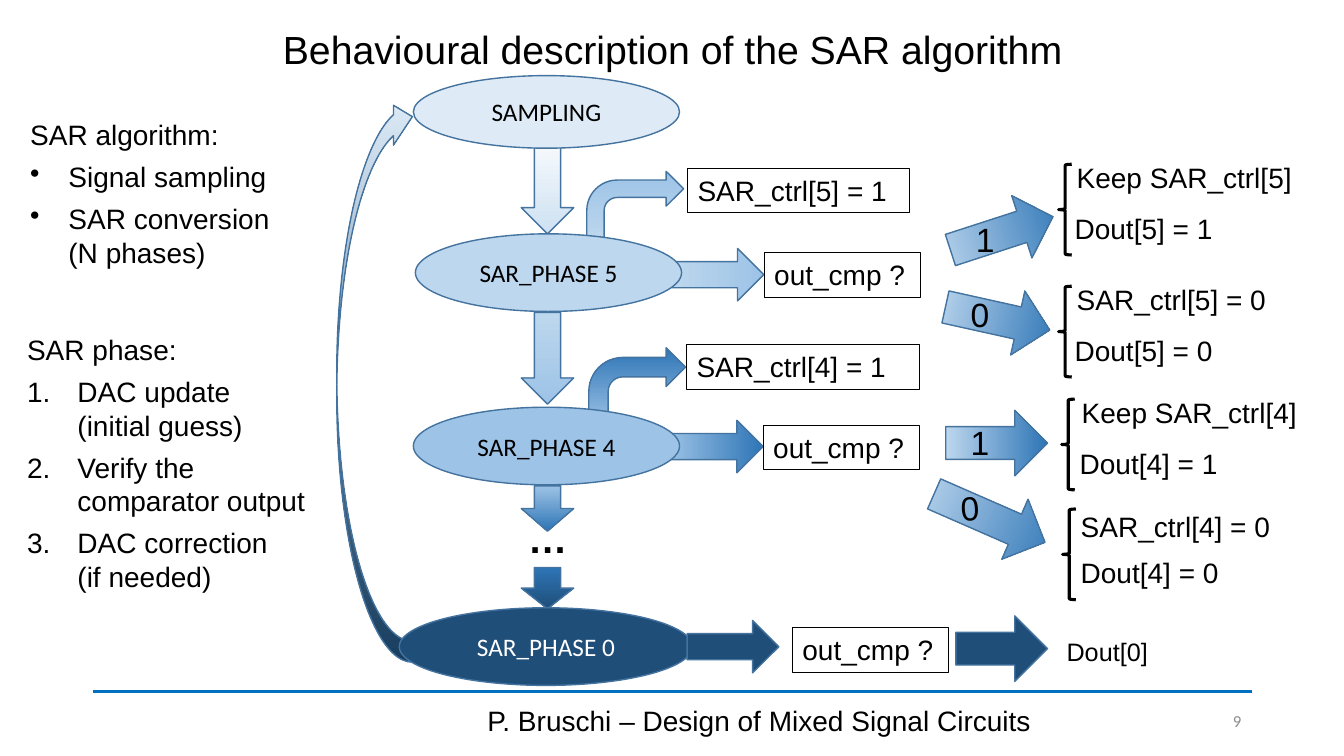
"""Build the slide on the behavioural description of the SAR algorithm."""
from pptx import Presentation
from pptx.dml.color import RGBColor
from pptx.enum.shapes import MSO_CONNECTOR, MSO_SHAPE
from pptx.enum.text import MSO_ANCHOR, PP_ALIGN
from pptx.util import Inches, Pt
from lxml.etree import SubElement
from pptx.oxml.ns import qn

PALE, SOFT, LIGHT, MID, DARK = "DEEBF7", "BDD7EE", "9DC3E6", "2E75B6", "1F4E79"
EDGE, BLACK = "43739E", "000000"
DOWN, BENT = MSO_SHAPE.DOWN_ARROW, MSO_SHAPE.BENT_ARROW

# kind, box, rotation, fill (one colour, or top and bottom of a gradient)
BACK = [
    (BENT, (5.84, 3.45, 0.96, 0.77), 0, (MID, LIGHT)),
    (DOWN, (6.83, 3.95, 0.52, 0.96), 270, (LIGHT, MID)),
    (BENT, (5.82, 1.7, 0.96, 0.69), 0, (LIGHT, SOFT)),
    (DOWN, (6.86, 2.27, 0.52, 0.91), 270, (SOFT, LIGHT)),
]
FRONT = [
    (DOWN, (7.01, 5.96, 0.52, 0.91), 270, (DARK,)),
    (DOWN, (9.61, 5.98, 0.65, 0.91), 270, (DARK,)),
]
# top, height, gradient of the arrows between the states
STEPS = [
    (1.41, 0.91, ("F7FAFD", "CEE1F2")),
    (3.1, 0.91, (SOFT, LIGHT)),
    (4.82, 0.45, (LIGHT, MID)),
    (5.63, 0.41, (MID, DARK)),
]
STATES = [
    ("SAMPLING", (4.1, 0.75, 2.64, 0.72), PALE, BLACK),
    ("SAR_PHASE 5", (4.12, 2.32, 2.64, 0.77), SOFT, BLACK),
    ("SAR_PHASE 4", (4.1, 4.04, 2.64, 0.77), LIGHT, BLACK),
    ("SAR_PHASE 0", (3.96, 6.03, 2.91, 0.77), DARK, "FFFFFF"),
]
# text, left, top, width
FRAMES = [
    ("SAR_ctrl[5] = 1", 6.82, 1.67, 2.2),
    ("out_cmp ?", 7.58, 2.51, 1.55),
    ("SAR_ctrl[4] = 1", 6.81, 3.42, 2.31),
    ("out_cmp ?", 7.57, 4.22, 1.55),
    ("out_cmp ?", 7.86, 6.23, 1.55),
]
# digit, its left, top and turn; arrow box and turn; brace left, top; results
CASES = [
    ("1", 9.58, 2.12, 0, (9.61, 1.78, 0.65, 1.07), 252, 10.5, 1.63,
     [("Keep SAR_ctrl[5]", 10.58, 1.54), ("Dout[5] = 1", 10.56, 2.05)]),
    ("0", 9.53, 2.87, 0, (9.57, 2.63, 0.65, 1.06), 282.5, 10.5, 2.84,
     [("SAR_ctrl[5] = 0", 10.58, 2.75), ("Dout[5] = 0", 10.56, 3.26)]),
    ("1", 9.53, 4.14, 0, (9.56, 3.89, 0.65, 1.01), 270, 10.53, 3.96,
     [("Keep SAR_ctrl[4]", 10.63, 3.87), ("Dout[4] = 1", 10.61, 4.38)]),
    ("0", 9.43, 4.79, 356.5, (9.49, 4.54, 0.65, 1.2), 293.6, 10.54, 5.05,
     [("SAR_ctrl[4] = 0", 10.62, 5.01), ("Dout[4] = 0", 10.62, 5.46)]),
]
# box, indent, bullet tag, bullet attributes, heading, items
LISTS = [
    ((0.17, 3.25, 2.96, 3.05), 0.5, "a:buAutoNum", {"type": "arabicPeriod"},
     "SAR phase:", ["DAC update (initial guess)", "Verify the comparator output",
                    "DAC correction \n(if needed)"]),
    ((0.2, 1.12, 2.78, 1.62), 0.38, "a:buChar", {"char": "•"},
     "SAR algorithm:", ["Signal sampling", "SAR conversion\n(N phases)"]),
]

deck = Presentation()
deck.slide_width, deck.slide_height = Inches(13.33), Inches(7.5)
slide = deck.slides.add_slide(deck.slide_layouts[6])


def color(code):
    return RGBColor.from_string(code)


def style(par, size, face="Arial", tint=BLACK, align=PP_ALIGN.LEFT):
    par.alignment = align
    par.font.size, par.font.name = Pt(size), face
    par.font.color.rgb = color(tint)


def write(item, words, *look, middle=False):
    frame = item.text_frame
    frame.word_wrap = True
    frame.vertical_anchor = MSO_ANCHOR.MIDDLE if middle else MSO_ANCHOR.TOP
    par = frame.paragraphs[0]
    par.text = words
    style(par, *look)
    return par


def label(words, box, *look, middle=False):
    item = slide.shapes.add_textbox(*map(Inches, box))
    return item, write(item, words, *look, middle=middle)


def draw(kind, box, turn=0, fills=(), edge=EDGE, width=1):
    item = slide.shapes.add_shape(kind, *map(Inches, box))
    item.shadow.inherit = False
    item.rotation = turn
    item.line.color.rgb, item.line.width = color(edge), Pt(width)
    if len(fills) == 2:
        item.fill.gradient()
        item.fill.gradient_angle = 270
        for stop, code in zip(item.fill.gradient_stops, fills):
            stop.color.rgb = color(code)
    elif fills:
        item.fill.solid()
        item.fill.fore_color.rgb = color(fills[0])
    else:
        item.fill.background()
    return item


def bullets(box, indent, tag, attrs, head, items):
    item, first = label(head, box, 20)
    first.space_before = Pt(6)
    for words in items:
        par = item.text_frame.add_paragraph()
        par.text = words
        style(par, 20)
        par.space_before = Pt(6)
        props = par._p.get_or_add_pPr()
        props.set("marL", str(Inches(indent)))
        props.set("indent", str(-Inches(indent)))
        mark = SubElement(props, qn(tag), attrs)
        props.insert(list(props).index(props.find(qn("a:defRPr"))), mark)


def main():
    rule = slide.shapes.add_connector(
        MSO_CONNECTOR.STRAIGHT, *map(Inches, (0.92, 6.86, 12.42, 6.86)))
    rule.line.color.rgb, rule.line.width = color("0070C0"), Pt(2.75)
    SubElement(rule._element.spPr, qn("a:effectLst"))

    for arrow in BACK:
        draw(*arrow)
    for top, high, fills in STEPS:
        draw(DOWN, (5.17, top, 0.52, high), 0, fills)
    loop = draw(MSO_SHAPE.CURVED_LEFT_ARROW, (3.34, 0.96, 0.75, 5.61), 0, (DARK, PALE))
    for spot, value in enumerate((0.278, 0.528, 0.25)):
        loop.adjustments[spot] = value
    for side in ("flipH", "flipV"):
        loop._element.spPr.xfrm.set(side, "1")

    for words, box, fill, tint in STATES:
        write(draw(MSO_SHAPE.OVAL, box, 0, (fill,)), words,
              18, "Calibri", tint, PP_ALIGN.CENTER, middle=True)
    for words, left, top, wide in FRAMES:
        write(draw(MSO_SHAPE.RECTANGLE, (left, top, wide, 0.44), 0, (), BLACK, 0.75),
              words, 20)
    for arrow in FRONT:
        draw(*arrow)

    for digit, left, top, tilt, box, turn, edge, high, results in CASES:
        draw(DOWN, box, turn, (SOFT, MID))
        label(digit, (left, top, 0.4, 0.5), 24)[0].rotation = tilt
        draw(MSO_SHAPE.LEFT_BRACE, (edge, high, 0.13, 0.9), 0, (), BLACK, 2.25)
        for words, start, level in results:
            label(words, (start, level, 2.7, 0.44), 20)

    for group in LISTS:
        bullets(*group)
    label("Dout[0]", (10.48, 6.26, 1.08, 0.4), 18)
    label("…", (5.14, 5.05, 1.54, 0.57), 28)[1].font.bold = True
    title = label("Behavioural description of the SAR algorithm", (0.92, 0.15, 11.5, 0.72),
                  28, "Arial", BLACK, PP_ALIGN.CENTER, middle=True)[1]
    title.line_spacing = 0.9
    label("P. Bruschi – Design of Mixed Signal Circuits", (4.42, 6.95, 6.22, 0.4),
          20, "Arial", BLACK, PP_ALIGN.CENTER, middle=True)
    label("9", (11.45, 6.95, 0.96, 0.4), 12, "Calibri", "8C8C8C", PP_ALIGN.RIGHT, middle=True)
    deck.save("out.pptx")


if __name__ == "__main__":
    main()
